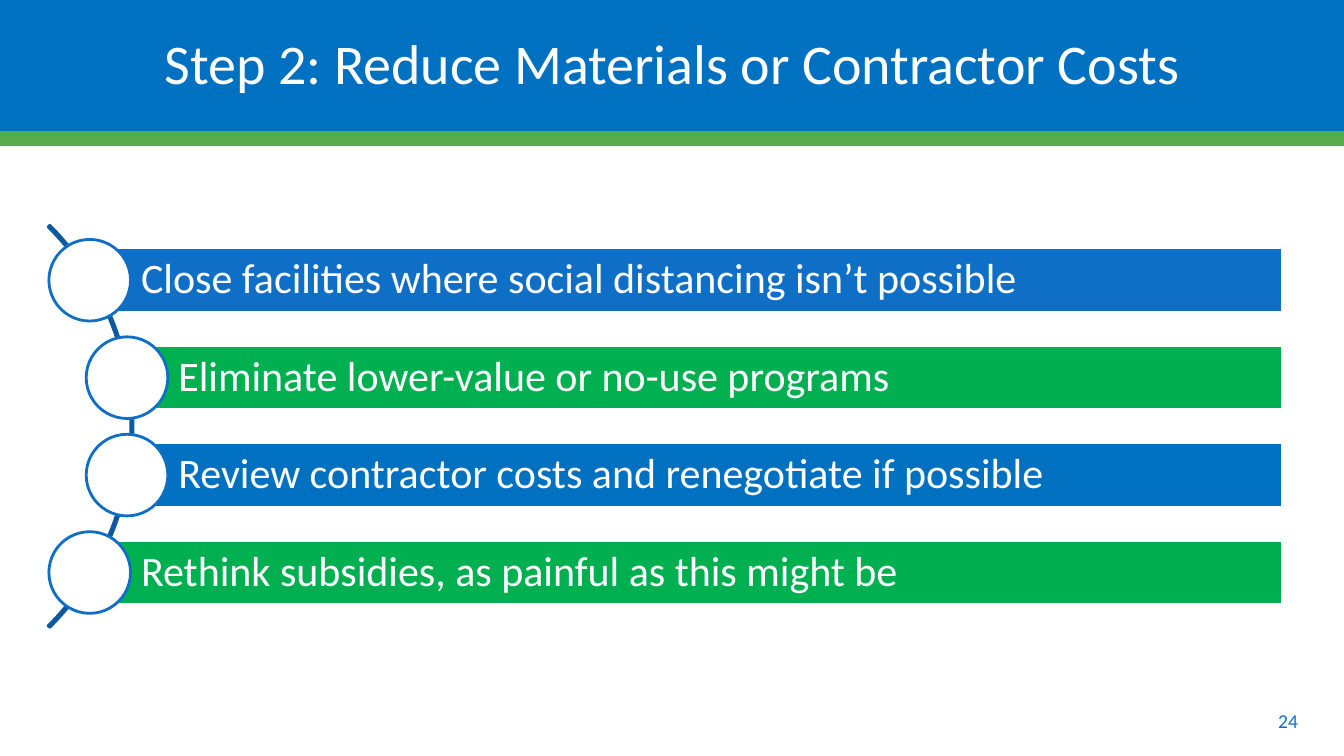
"""Build the slide on reducing materials or contractor costs."""
from pptx import Presentation
from pptx.dml.color import RGBColor
from pptx.enum.shapes import MSO_SHAPE
from pptx.enum.text import MSO_ANCHOR, MSO_AUTO_SIZE, PP_ALIGN
from pptx.util import Pt

RECTANGLE, OVAL, BLOCK_ARC = MSO_SHAPE.RECTANGLE, MSO_SHAPE.OVAL, MSO_SHAPE.BLOCK_ARC
MIDDLE = MSO_ANCHOR.MIDDLE
NO_FIT = MSO_AUTO_SIZE.NONE
LEFT, CENTER = PP_ALIGN.LEFT, PP_ALIGN.CENTER

WHITE = RGBColor(0xFF, 0xFF, 0xFF)
BLUE = RGBColor(0x00, 0x70, 0xC0)
ACCENT_BLUE = RGBColor(0x0F, 0x6F, 0xC6)
DARK_BLUE = RGBColor(0x0C, 0x59, 0x9F)
GREEN = RGBColor(0x00, 0xB0, 0x50)
STRIPE_GREEN = RGBColor(0x56, 0xAC, 0x49)

SLIDE_WIDTH = 960
BAR_RIGHT, BAR_TOP, BAR_HEIGHT, BAR_STEP = 915.84, 177.12, 46.08, 69.6
CIRCLE_SIZE = 58.32
STEPS = [
    ("Close facilities where social distancing isn’t possible", 64.08, ACCENT_BLUE),
    ("Eliminate lower-value or no-use programs", 90.72, GREEN),
    ("Review contractor costs and renegotiate if possible", 90.72, BLUE),
    ("Rethink subsidies, as painful as this might be", 64.08, GREEN),
]


def add_box(kind, left, top, width, height, fill=None, line=None):
    box = page.shapes.add_shape(kind, Pt(left), Pt(top), Pt(width), Pt(height))
    box.shadow.inherit = False
    if fill is None:
        box.fill.background()
    else:
        box.fill.solid()
        box.fill.fore_color.rgb = fill
    if line is None:
        box.line.fill.background()
    else:
        box.line.color.rgb = line
        box.line.width = Pt(2)
    return box


def write(box, text, size, color, align, margins, spacing=1.0):
    frame = box.text_frame
    frame.word_wrap = True
    frame.auto_size = NO_FIT
    frame.vertical_anchor = MIDDLE
    (frame.margin_left, frame.margin_top,
     frame.margin_right, frame.margin_bottom) = [Pt(margin) for margin in margins]
    para = frame.paragraphs[0]
    para.alignment = align
    para.line_spacing = spacing
    para.space_before = Pt(0)
    span = para.add_run()
    span.text = text
    span.font.name = "Calibri"
    span.font.size = Pt(size)
    span.font.color.rgb = color


deck = Presentation()
deck.slide_width, deck.slide_height = Pt(SLIDE_WIDTH), Pt(540)
page = deck.slides.add_slide(deck.slide_layouts[5])

title = page.shapes.title
title.left, title.top, title.width, title.height = Pt(0), Pt(-2.16), Pt(SLIDE_WIDTH), Pt(95.76)
title.fill.solid()
title.fill.fore_color.rgb = BLUE
write(title, "Step 2: Reduce Materials or Contractor Costs", 40, WHITE, CENTER,
      (7.2, 7.2, 7.2, 3.6), 0.9)

add_box(RECTANGLE, 0, 93.6, SLIDE_WIDTH, 10.8, STRIPE_GREEN)

arc = add_box(BLOCK_ARC, -311.04, 101.52, 406.08, 406.08, line=DARK_BLUE)
for index, value in enumerate((189, 27, 0.004)):
    arc.adjustments[index] = value

for index, (text, left, color) in enumerate(STEPS):
    top = BAR_TOP + index * BAR_STEP
    bar = add_box(RECTANGLE, left, top, BAR_RIGHT - left, BAR_HEIGHT, color, WHITE)
    write(bar, text, 30, WHITE, LEFT, (36.72, 5.76, 5.76, 5.76), 0.9)
    add_box(OVAL, left - CIRCLE_SIZE / 2, top + (BAR_HEIGHT - CIRCLE_SIZE) / 2,
            CIRCLE_SIZE, CIRCLE_SIZE, WHITE, ACCENT_BLUE)

page_number = page.shapes.add_textbox(Pt(884.16), Pt(500.4), Pt(72), Pt(28.8))
write(page_number, "24", 14, ACCENT_BLUE, CENTER, (7.2, 3.6, 7.2, 3.6))

deck.save("out.pptx")
